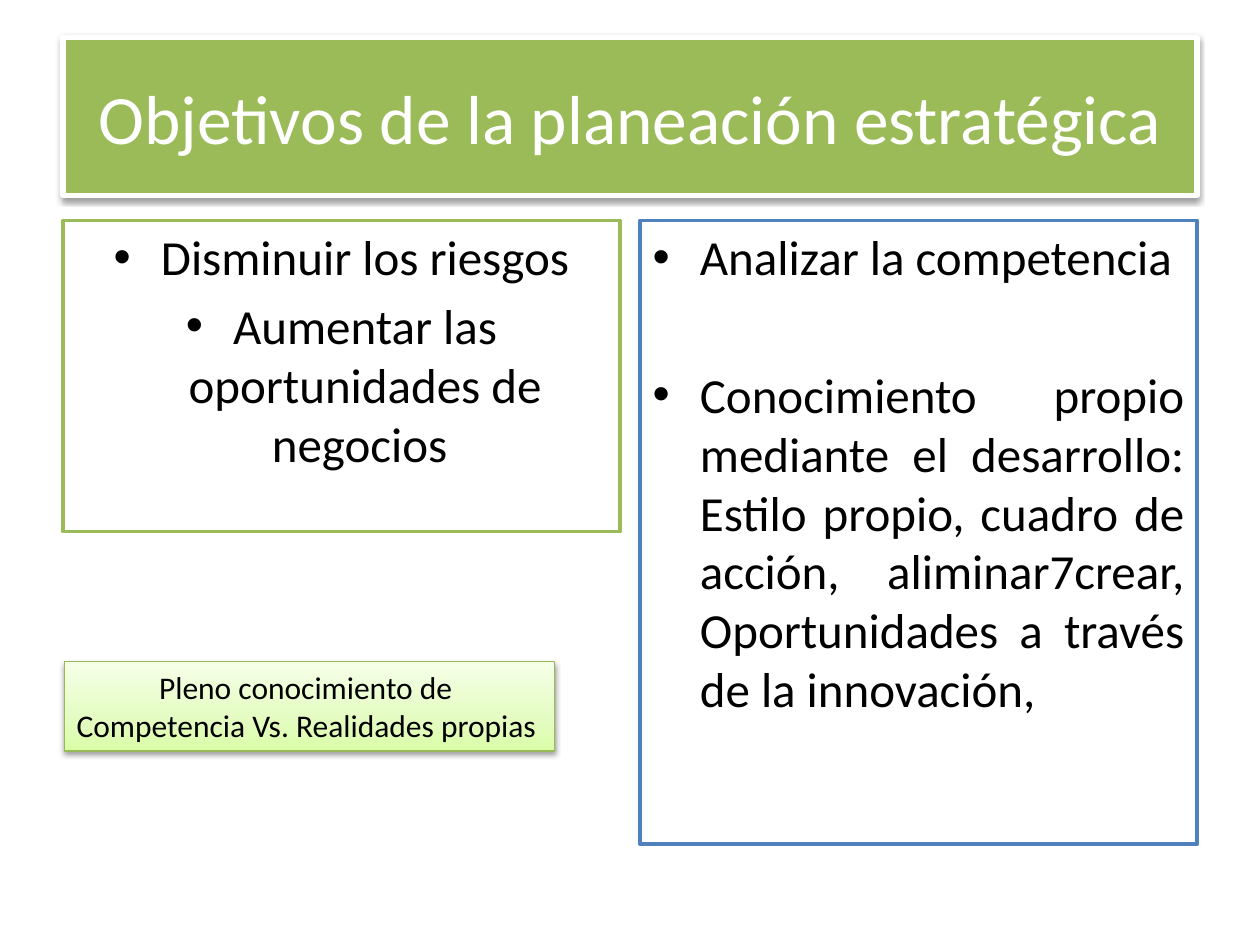
from lxml import etree
from pptx import Presentation
from pptx.dml.color import RGBColor
from pptx.enum import shapes, text
from pptx.oxml.ns import qn
from pptx.util import Inches, Pt

GREEN = RGBColor(0x9B, 0xBB, 0x59)
DARK_GREEN = RGBColor(0x98, 0xB9, 0x55)
BLUE = RGBColor(0x4F, 0x81, 0xBD)
WHITE = RGBColor(0xFF, 0xFF, 0xFF)
BLACK = RGBColor(0, 0, 0)
NOTE_STOPS = [
    (0, RGBColor(0xDA, 0xFD, 0xA7)),
    (35, RGBColor(0xE4, 0xFC, 0xC2)),
    (100, RGBColor(0xF5, 0xFF, 0xE7)),
]
CENTER = text.PP_ALIGN.CENTER
JUSTIFY = text.PP_ALIGN.JUSTIFY
LEFT = text.PP_ALIGN.LEFT


def child(parent, tag, **attrs):
    return etree.SubElement(parent, qn(tag), {k: str(v) for k, v in attrs.items()})


def place(sp, left, top, width, height):
    sp.left, sp.top = Inches(left), Inches(top)
    sp.width, sp.height = Inches(width), Inches(height)


def outline(sp, color, width):
    sp.line.color.rgb = color
    sp.line.width = Pt(width)


def solid(sp, color):
    sp.fill.solid()
    sp.fill.fore_color.rgb = color


def add_shadow(sp):
    sp.shadow.inherit = False
    effects = sp._element.spPr.find(qn("a:effectLst"))
    shadow = child(effects, "a:outerShdw", blurRad=Pt(3.1), dist=Pt(1.6),
                   dir=5400000, rotWithShape=0)
    color = child(shadow, "a:srgbClr", val=BLACK)
    child(color, "a:alpha", val=38000)


def fill_gradient(sp, stops):
    sp.fill.gradient()
    grad = sp._element.spPr.find(qn("a:gradFill"))
    for old in list(grad):
        grad.remove(old)
    stop_list = child(grad, "a:gsLst")
    for pos, color in stops:
        stop = child(stop_list, "a:gs", pos=pos * 1000)
        child(stop, "a:srgbClr", val=color)
    child(grad, "a:lin", ang=16200000, scaled=1)


def write(tf, lines, size, color):
    for i, (line, align) in enumerate(lines):
        p = tf.paragraphs[0] if i == 0 else tf.add_paragraph()
        p.alignment = align
        r = p.add_run()
        r.text = line
        r.font.name = "Calibri"
        r.font.size = Pt(size)
        r.font.color.rgb = color


def set_title(sp, title):
    place(sp, 0.5, 0.3, 9, 1.25)
    solid(sp, GREEN)
    outline(sp, WHITE, 3)
    add_shadow(sp)
    tf = sp.text_frame
    tf.auto_size = text.MSO_AUTO_SIZE.NONE
    tf.vertical_anchor = text.MSO_ANCHOR.MIDDLE
    write(tf, [(title, CENTER)], 39.6, WHITE)


def set_list(sp, left, height, color, items, align):
    place(sp, left, 1.75, 4.42, height)
    solid(sp, WHITE)
    outline(sp, color, 2)
    tf = sp.text_frame
    tf.auto_size = text.MSO_AUTO_SIZE.NONE
    write(tf, [(item, align) for item in items], 28, BLACK)


def add_note(s, lines):
    sp = s.shapes.add_shape(shapes.MSO_SHAPE.RECTANGLE, 0, 0, 0, 0)
    place(sp, 0.51, 5.25, 3.89, 0.71)
    fill_gradient(sp, NOTE_STOPS)
    outline(sp, DARK_GREEN, 0.75)
    add_shadow(sp)
    tf = sp.text_frame
    tf.word_wrap = False
    tf.auto_size = text.MSO_AUTO_SIZE.SHAPE_TO_FIT_TEXT
    tf.vertical_anchor = text.MSO_ANCHOR.TOP
    write(tf, lines, 18, BLACK)


def main():
    prs = Presentation()
    prs.slide_width, prs.slide_height = Inches(10), Inches(7.5)
    s = prs.slides.add_slide(prs.slide_layouts[3])
    title, risks, knowledge = s.placeholders
    set_title(title, "Objetivos de la planeación estratégica")
    set_list(risks, 0.5, 2.47, GREEN, [
        "Disminuir los riesgos",
        "Aumentar las oportunidades de negocios ",
    ], CENTER)
    set_list(knowledge, 5.08, 4.95, BLUE, [
        "Analizar la competencia",
        "Conocimiento propio mediante el desarrollo: Estilo propio, cuadro de "
        "acción, aliminar7crear, Oportunidades a través de la innovación, ",
    ], JUSTIFY)
    knowledge.text_frame.paragraphs[1].space_before = Pt(45)
    add_note(s, [
        ("Pleno conocimiento de ", CENTER),
        ("Competencia Vs. Realidades propias", LEFT),
    ])
    prs.save("out.pptx")


if __name__ == "__main__":
    main()
